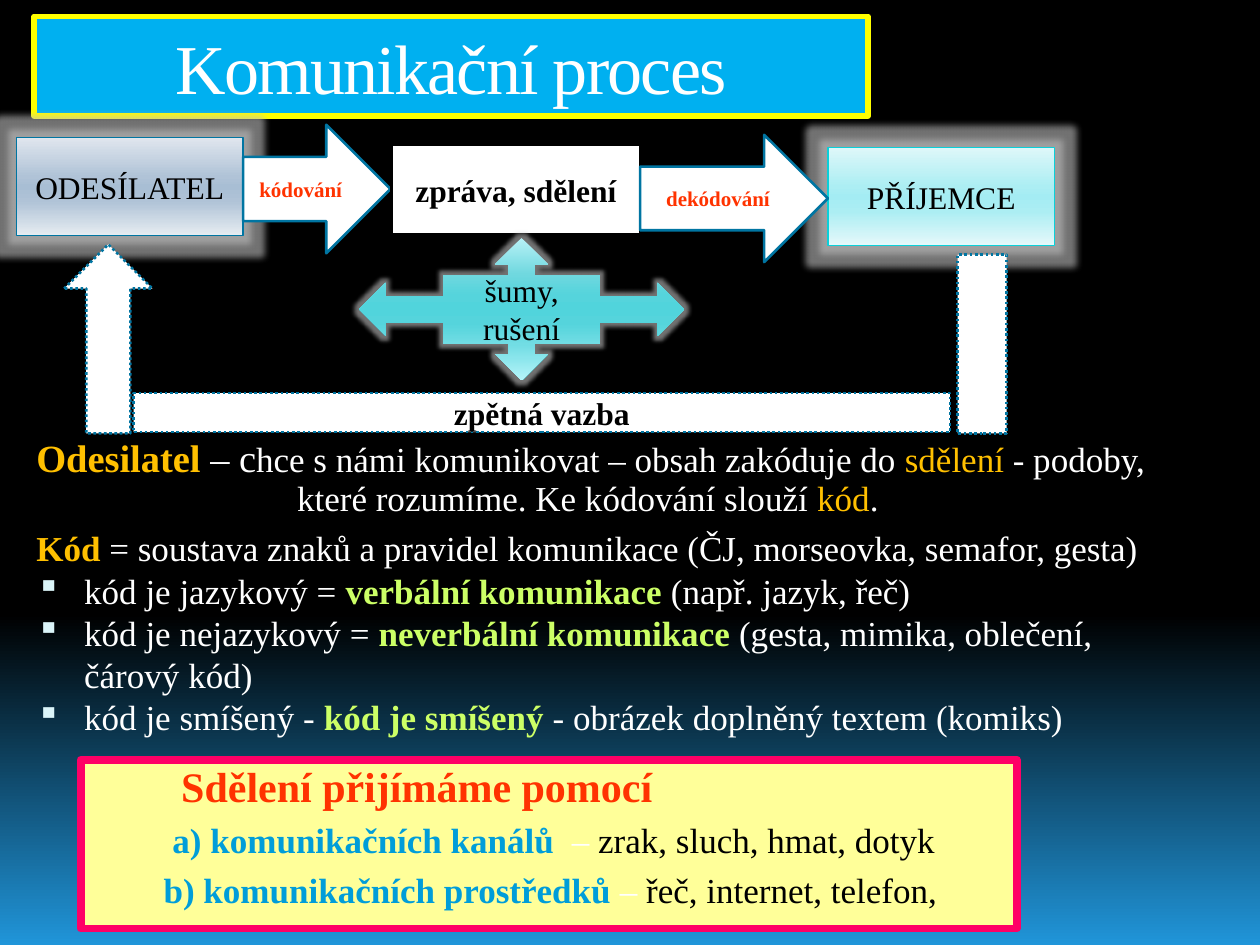
from lxml import etree
from pptx import Presentation
from pptx.dml.color import RGBColor
from pptx.enum.dml import MSO_LINE
from pptx.enum.shapes import MSO_SHAPE
from pptx.enum.text import MSO_ANCHOR, PP_ALIGN
from pptx.oxml.ns import qn
from pptx.util import Inches, Pt

RECTANGLE, RIGHT_ARROW = MSO_SHAPE.RECTANGLE, MSO_SHAPE.RIGHT_ARROW
UP_ARROW, CALLOUT = MSO_SHAPE.UP_ARROW, MSO_SHAPE.QUAD_ARROW_CALLOUT
DOTTED = MSO_LINE.ROUND_DOT
CENTER, LEFT = PP_ALIGN.CENTER, PP_ALIGN.LEFT
MIDDLE, TOP = MSO_ANCHOR.MIDDLE, MSO_ANCHOR.TOP
FONT = "Times New Roman"
COLORS = {
    "black": "000000", "white": "FFFFFF", "sky": "00B0F0", "yellow": "FFFF00",
    "outline": "0075A2", "cyan": "0BD0D9", "red": "FF3300", "gold": "FFC000",
    "lime": "CCFF66", "bullet": "DBF5F9", "cream": "FFFF99", "pink": "FF0066",
    "blue": "009DD9", "glow": "BFBFBF",
}
GRADIENTS = {
    "background": [(0, "000000"), (65, "000000"), (100, "2095D9")],
    "sender": [(0, "E0E6EE"), (40, "B0C3D7"), (50, "A8BED4"), (65, "B0C3D7"), (100, "E6ECF1")],
    "receiver": [(0, "DEF7F9"), (40, "ACEEF3"), (50, "A4ECF3"), (65, "ACEEF3"), (100, "E5F8FA")],
    "noise": [(0, "B7F1F6"), (25, "70D8DF"), (40, "55D4DC"), (50, "51D4DC"),
              (60, "55D4DC"), (75, "72DDE4"), (100, "B5F4F9")],
}


def rgb(name):
    return RGBColor.from_string(COLORS[name])


def add_color(parent, value):
    color = etree.SubElement(parent, qn("a:srgbClr"))
    color.set("val", value)
    return color


def paint(fill, element, name):
    """Fill with a plain colour or a top-to-bottom gradient."""
    if name in COLORS:
        fill.solid()
        fill.fore_color.rgb = rgb(name)
        return
    fill.gradient()
    fill.gradient_angle = 270
    stops = element.find(".//" + qn("a:gsLst"))
    for stop in list(stops):
        stops.remove(stop)
    for position, value in GRADIENTS[name]:
        stop = etree.SubElement(stops, qn("a:gs"))
        stop.set("pos", str(position * 1000))
        add_color(stop, value)


def outline(shape, color, width, dash=None):
    shape.line.color.rgb = rgb(color)
    shape.line.width = Pt(width)
    if dash:
        shape.line.dash_style = dash


def add_glow(shape, radius):
    effects = shape._element.spPr.find(qn("a:effectLst"))
    glow = etree.SubElement(effects, qn("a:glow"))
    glow.set("rad", str(Pt(radius)))
    alpha = etree.SubElement(add_color(glow, COLORS["glow"]), qn("a:alpha"))
    alpha.set("val", "60000")


def add_run(paragraph, text, color, size, bold=False):
    run = paragraph.add_run()
    run.text = text
    run.font.name = FONT
    run.font.size = Pt(size)
    run.font.bold = bold
    run.font.color.rgb = rgb(color)
    return run


def add_box(slide, box, kind, fill, line=None, text="", color="black", size=18,
            bold=False, glow=0):
    shape = slide.shapes.add_shape(kind, *map(Inches, box))
    shape.shadow.inherit = False
    paint(shape.fill, shape._element, fill)
    if line:
        outline(shape, *line)
    else:
        shape.line.fill.background()
    if glow:
        add_glow(shape, glow)
    if text:
        shape.text_frame.vertical_anchor = MIDDLE
        paragraph = shape.text_frame.paragraphs[0]
        paragraph.alignment = CENTER
        add_run(paragraph, text, color, size, bold)
    return shape


def set_indent(paragraph, left, hanging=0.0):
    properties = paragraph._p.get_or_add_pPr()
    properties.set("marL", str(Inches(left)))
    properties.set("indent", str(Inches(-hanging)))
    return properties


def add_bullet(properties):
    add_color(etree.SubElement(properties, qn("a:buClr")), COLORS["bullet"])
    etree.SubElement(properties, qn("a:buSzPct")).set("val", "95000")
    etree.SubElement(properties, qn("a:buChar")).set("char", "▪")


def fill_paragraphs(text_frame, entries):
    """Each entry: left indent, hanging, space before, line spacing, bullet, runs."""
    text_frame.word_wrap = True
    text_frame.vertical_anchor = TOP
    for index, (left, hanging, before, spacing, bullet, runs) in enumerate(entries):
        paragraph = text_frame.add_paragraph() if index else text_frame.paragraphs[0]
        paragraph.alignment = LEFT
        properties = set_indent(paragraph, left, hanging)
        paragraph.line_spacing = spacing
        paragraph.space_before = Pt(before)
        if bullet:
            add_bullet(properties)
        for run in runs:
            add_run(paragraph, *run)


def add_title(slide, box):
    title = slide.shapes.title
    title.left, title.top, title.width, title.height = map(Inches, box)
    paint(title.fill, title._element, "sky")
    outline(title, "yellow", 3)
    title.text_frame.vertical_anchor = MIDDLE
    paragraph = title.text_frame.paragraphs[0]
    paragraph.alignment = CENTER
    run = add_run(paragraph, "Komunikační proces", "white", 40)
    run._r.get_or_add_rPr().set("spc", "-100")


def add_process(slide, box):
    """Communication diagram; parts are placed from the box corner."""
    left, top = box[:2]
    solid, dotted = ("outline", 1.5), ("outline", 1.5, DOTTED)
    parts = [
        # Sender, message and receiver
        ((0, 0.10, 1.8, 0.78), RECTANGLE, "sender", ("outline", 0.94),
         "ODESÍLATEL", "black", 18, False, 8),
        ((1.8, 0, 1.17, 1.02), RIGHT_ARROW, "white", solid, "kódování", "red", 12, True),
        ((2.98, 0.16, 1.97, 0.71), RECTANGLE, "white", ("black", 1.5),
         "zpráva, sdělení", "black", 18, True),
        ((6.44, 0.18, 1.8, 0.78), RECTANGLE, "receiver", ("cyan", 0.94),
         "PŘÍJEMCE", "black", 18, False, 8),
        # Feedback path
        ((0.38, 0.95, 0.7, 1.5), UP_ARROW, "white", dotted),
        ((7.47, 1.03, 0.39, 1.42), RECTANGLE, "white", dotted),
        ((0.93, 2.13, 6.48, 0.31), RECTANGLE, "white", dotted,
         "zpětná vazba", "black", 18, True),
        # Noise and decoding
        ((2.72, 0.9, 2.58, 1.13), CALLOUT, "noise", None,
         "šumy, rušení", "black", 18, False, 5),
        ((4.95, 0.08, 1.49, 1.01), RIGHT_ARROW, "white", solid, "dekódování", "red", 12, True),
    ]
    for (x, y, width, height), *style in parts:
        add_box(slide, (left + x, top + y, width, height), *style)


def add_definitions(slide, box):
    text_box = slide.shapes.add_textbox(*map(Inches, box))
    entries = [
        (0.45, 0.38, 0, 0.9, False, [
            ("Odesilatel ", "gold", 22, True), ("– c", "white", 22),
            ("hce s námi komunikovat – obsah zakóduje do ", "white", 20),
            ("sdělení", "gold", 20), (" - podoby,", "white", 20)]),
        (2.14, 0, 0, 0.9, False, [
            ("které rozumíme. Ke kódování slouží ", "white", 20),
            ("kód", "gold", 20), (".", "white", 20)]),
        (0.45, 0.38, 7, 0.9, False, [
            ("Kód ", "gold", 20, True),
            ("= soustava znaků a pravidel komunikace (ČJ, morseovka, semafor, gesta)",
             "white", 20)]),
    ]
    code_types = [
        ("kód je jazykový = ", "verbální komunikace ", "(např. jazyk, řeč)"),
        ("kód je nejazykový = ", "neverbální komunikace ",
         "(gesta, mimika, oblečení, čárový kód)"),
        ("kód je smíšený - ", "kód je smíšený ", "- obrázek doplněný textem (komiks)"),
    ]
    for start, term, example in code_types:
        entries.append((0.45, 0.38, 0, 1.0, True, [
            (start, "white", 20), (term, "lime", 20, True), (example, "white", 20)]))
    fill_paragraphs(text_box.text_frame, entries)


def add_channels(slide, box):
    shape = add_box(slide, box, RECTANGLE, "cream", ("pink", 4.5))
    entries = [(0.7, 0, 0, 0.9, False, [("Sdělení přijímáme pomocí", "red", 24, True)])]
    for left, term, examples in [
        (0.63, "a) komunikačních kanálů  ", "zrak, sluch, hmat, dotyk"),
        (0.56, "b) komunikačních prostředků ", "řeč, internet, telefon,"),
    ]:
        entries.append((left, 0, 7, 0.9, False, [
            (term, "blue", 20, True), ("– ", "white", 20), (examples, "black", 20)]))
    fill_paragraphs(shape.text_frame, entries)


def main():
    presentation = Presentation()
    presentation.slide_width, presentation.slide_height = Inches(10), Inches(7.5)
    slide = presentation.slides.add_slide(presentation.slide_layouts[5])
    paint(slide.background.fill, slide._element, "background")
    add_title(slide, (0.27, 0.13, 6.62, 0.79))
    add_process(slide, (0.13, 0.99, 8.24, 2.45))
    add_definitions(slide, (0.12, 3.44, 9.37, 2.32))
    add_channels(slide, (0.64, 6.03, 7.43, 1.34))
    presentation.save("out.pptx")


if __name__ == "__main__":
    main()
